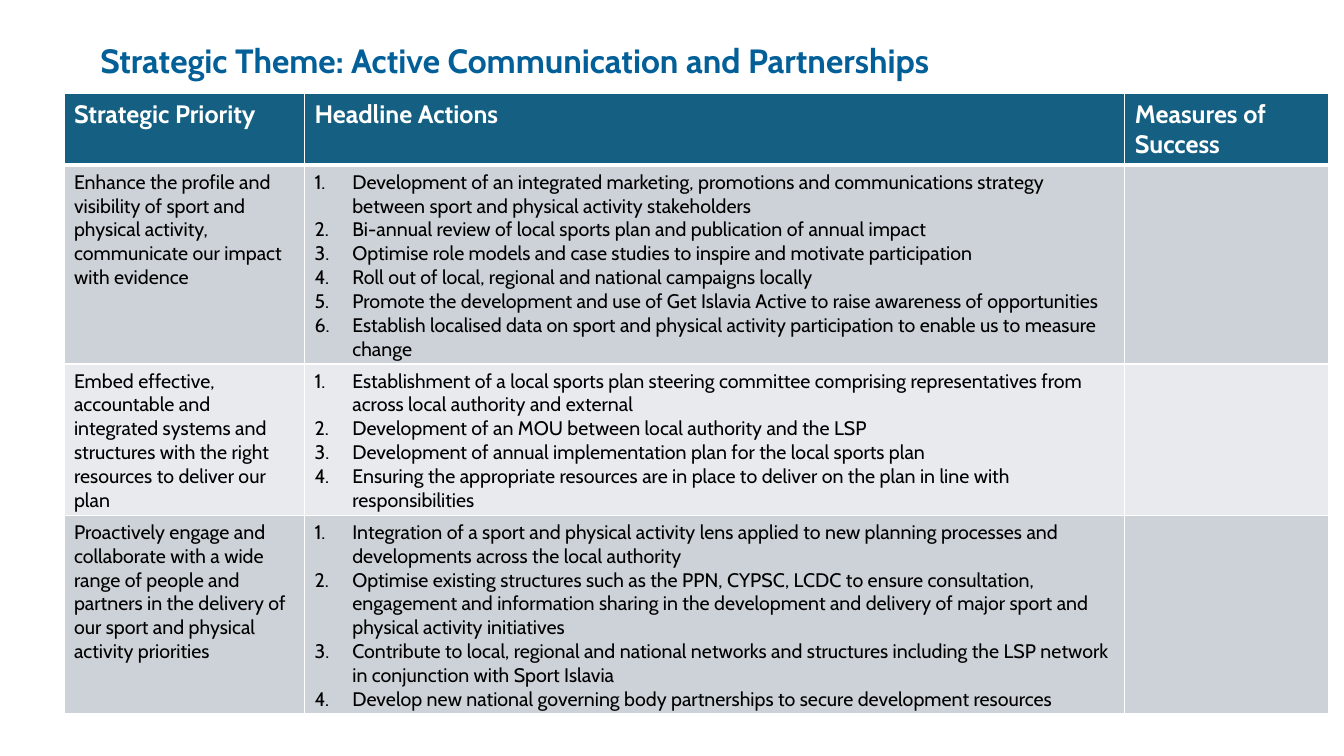
from lxml import etree
from pptx import Presentation, util as u
from pptx.dml.color import RGBColor
from pptx.oxml import ns

Pt = u.Pt
FONT = "Cabin"
COLOURS = {
    "title": "025F98",
    "header": "156082",
    "band_dark": "CCD2D8",
    "band_light": "E8EAED",
    "white": "FFFFFF",
    "black": "000000",
}
TITLE = "Strategic Theme: Active Communication and Partnerships"
HEADINGS = ["Strategic Priority", "Headline Actions", "Measures of Success"]
PRIORITIES = [
    (
        "Enhance the profile and visibility of sport and physical activity, "
        "communicate our impact with evidence",
        [
            "Development of an integrated marketing, promotions and communications "
            "strategy between sport and physical activity stakeholders",
            "Bi-annual review of local sports plan and publication of annual impact",
            "Optimise role models and case studies to inspire and motivate participation",
            "Roll out of local, regional and national campaigns locally",
            "Promote the development and use of Get Islavia Active to raise awareness "
            "of opportunities",
            "Establish localised data on sport and physical activity participation to "
            "enable us to measure change",
        ],
    ),
    (
        "Embed effective, accountable and integrated systems and structures with "
        "the right resources to deliver our plan",
        [
            "Establishment of a local sports plan steering committee comprising "
            "representatives from across local authority and external",
            "Development of an MOU between local authority and the LSP",
            "Development of annual implementation plan for the local sports plan",
            "Ensuring the appropriate resources are in place to deliver on the plan in "
            "line with responsibilities",
        ],
    ),
    (
        "Proactively engage and collaborate with a wide range of people and partners "
        "in the delivery of our sport and physical activity priorities",
        [
            "Integration of a sport and physical activity lens applied to new planning "
            "processes and developments across the local authority",
            "Optimise existing structures such as the PPN, CYPSC, LCDC to ensure "
            "consultation, engagement and information sharing in the development and "
            "delivery of major sport and physical activity initiatives",
            "Contribute to local, regional and national networks and structures "
            "including the LSP network in conjunction with Sport Islavia",
            "Develop new national governing body partnerships to secure development "
            "resources",
        ],
    ),
]
COLUMN_WIDTHS = [171.8, 586, 145.5]
ROW_HEIGHTS = [51, 142, 108, 142]


def rgb(name):
    return RGBColor.from_string(COLOURS[name])


def write(frame, lines, size, colour, bold=False):
    """Put one paragraph per line into a text frame."""
    frame.text = "\n".join(lines)
    for para in frame.paragraphs:
        para.font.name = FONT
        para.font.size = Pt(size)
        para.font.bold = bold
        para.font.color.rgb = rgb(colour)


def number_paragraphs(frame):
    for para in frame.paragraphs:
        properties = para._p.get_or_add_pPr()
        properties.set("marL", str(Pt(27)))
        properties.set("indent", str(Pt(-27)))
        bullet = etree.Element(ns.qn("a:buAutoNum"), type="arabicPeriod")
        properties.insert_element_before(bullet, "a:tabLst", "a:defRPr", "a:extLst")


def style_cell(cell, fill, top=1, bottom=1):
    """Give a cell white borders, thicker where asked, and a solid fill."""
    properties = cell._tc.get_or_add_tcPr()
    for side, width in (("L", 1), ("R", 1), ("T", top), ("B", bottom)):
        line = etree.SubElement(properties, ns.qn(f"a:ln{side}"), w=str(Pt(width)))
        solid = etree.SubElement(line, ns.qn("a:solidFill"))
        etree.SubElement(solid, ns.qn("a:srgbClr"), val=COLOURS["white"])
    cell.fill.solid()
    cell.fill.fore_color.rgb = rgb(fill)


def add_title(slide):
    box = slide.shapes.add_textbox(Pt(64.6), Pt(24.9), Pt(694), Pt(36))
    box.text_frame.word_wrap = True
    write(box.text_frame, [TITLE], 24, "title", bold=True)


def add_priority_table(slide):
    frame = slide.shapes.add_table(
        len(ROW_HEIGHTS), len(COLUMN_WIDTHS), Pt(45.7), Pt(67),
        Pt(sum(COLUMN_WIDTHS)), Pt(sum(ROW_HEIGHTS)),
    )
    table = frame.table
    table.horz_banding = False
    for column, width in zip(table.columns, COLUMN_WIDTHS):
        column.width = Pt(width)
    for row, height in zip(table.rows, ROW_HEIGHTS):
        row.height = Pt(height)

    for cell, heading in zip(table.rows[0].cells, HEADINGS):
        write(cell.text_frame, [heading], 18, "white", bold=True)
        style_cell(cell, "header", bottom=3)

    for index, (priority, actions) in enumerate(PRIORITIES, start=1):
        cells = table.rows[index].cells
        write(cells[0].text_frame, [priority], 14, "black")
        write(cells[1].text_frame, actions, 14, "black")
        number_paragraphs(cells[1].text_frame)
        band = "band_dark" if index % 2 else "band_light"
        for cell in cells:
            style_cell(cell, band, top=3 if index == 1 else 1)


def main():
    deck = Presentation()
    deck.slide_width, deck.slide_height = Pt(960), Pt(540)
    slide = deck.slides.add_slide(deck.slide_layouts[6])
    add_title(slide)
    add_priority_table(slide)
    deck.save("out.pptx")


if __name__ == "__main__":
    main()
